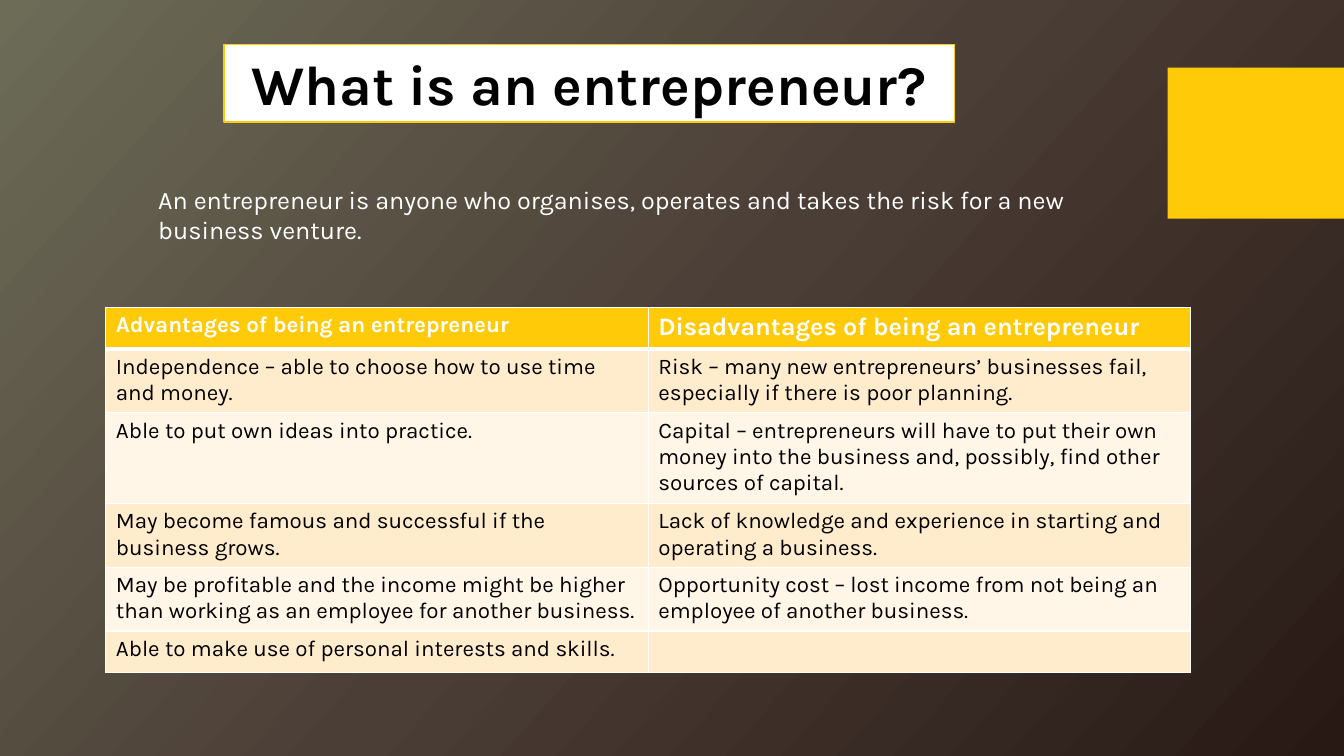
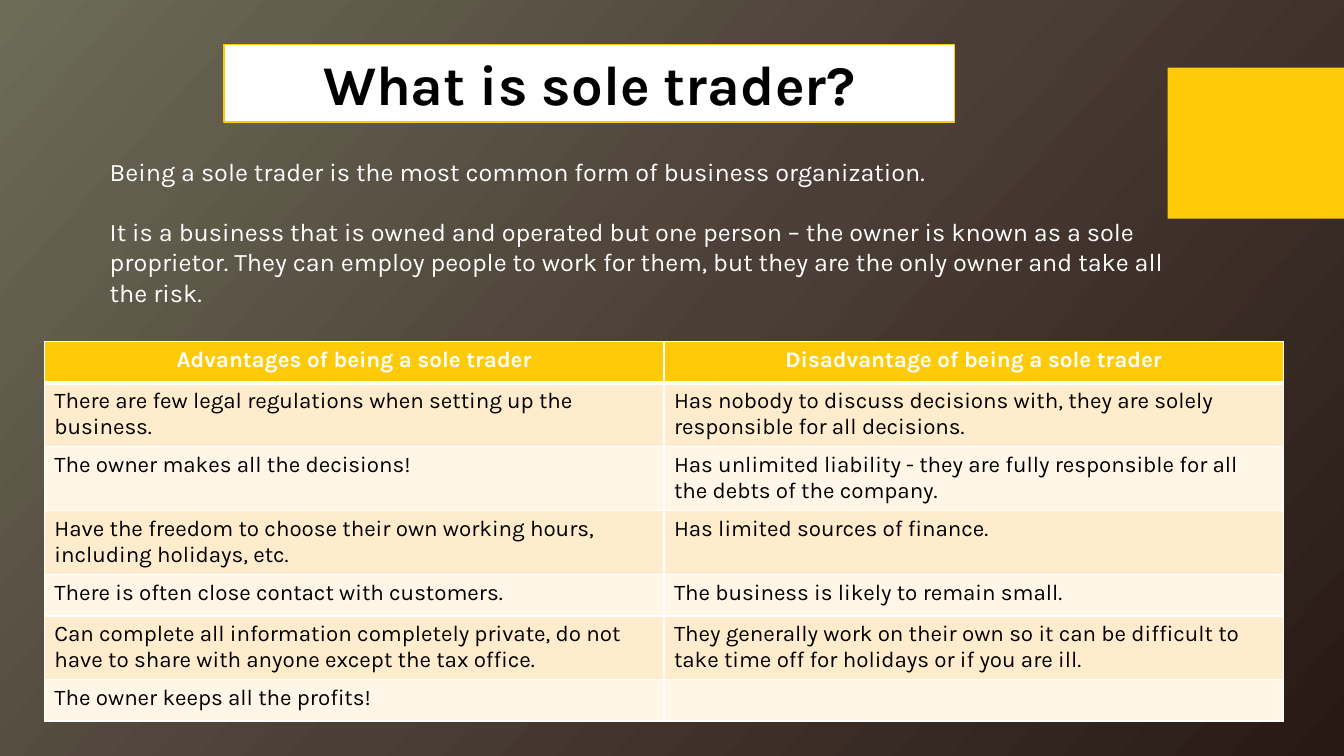
from copy import deepcopy

from lxml.etree import SubElement
from pptx import Presentation
from pptx.dml.color import RGBColor
from pptx.enum.shapes import MSO_SHAPE as Shape
from pptx.enum.text import MSO_AUTO_SIZE as AutoSize, PP_ALIGN as Align
from pptx.oxml.ns import qn
from pptx.util import Inches, Pt

COLORS = {
    "white": "FFFFFF",
    "black": "000000",
    "yellow": "FFCA08",
    "band_dark": "FFECCC",
    "band_light": "FFF6E7",
}
BACKGROUND = [(0, "6C6C57"), (0.5, "4B3E36"), (1, "281915")]
FONT = "Karla"
ROW_HEIGHT = 0.41

ENTREPRENEUR_ROWS = [
    ("Advantages of being an entrepreneur", "Disadvantages of being an entrepreneur"),
    ("Independence – able to choose how to use time and money.",
     "Risk – many new entrepreneurs’ businesses fail, especially if there is poor planning."),
    ("Able to put own ideas into practice.",
     "Capital – entrepreneurs will have to put their own money into the business and, "
     "possibly, find other sources of capital."),
    ("May become famous and successful if the business grows.",
     "Lack of knowledge and experience in starting and operating a business."),
    ("May be profitable and the income might be higher than working as an employee "
     "for another business.",
     "Opportunity cost – lost income from not being an employee of another business."),
    ("Able to make use of personal interests and skills.", ""),
]
SOLE_TRADER_ROWS = [
    ("Advantages of being a sole trader", "Disadvantage of being a sole trader"),
    ("There are few legal regulations when setting up the business.",
     "Has nobody to discuss decisions with, they are solely responsible for all decisions."),
    ("The owner makes all the decisions!",
     "Has unlimited liability - they are fully responsible for all the debts of the company."),
    ("Have the freedom to choose their own working hours, including holidays, etc.",
     "Has limited sources of finance."),
    ("There is often close contact with customers.",
     "The business is likely to remain small."),
    ("Can complete all information completely private, do not have to share with anyone "
     "except the tax office.",
     "They generally work on their own so it can be difficult to take time off for "
     "holidays or if you are ill."),
    ("The owner keeps all the profits!", ""),
]


def rgb(name):
    return RGBColor.from_string(COLORS[name])


# Text
def write(frame, *paragraphs, size=16, color="black", bold=False, align=Align.LEFT, gap=0):
    frame.word_wrap = True
    for i, text in enumerate(paragraphs):
        paragraph = frame.add_paragraph() if i else frame.paragraphs[0]
        paragraph.text = text
        paragraph.alignment = align
        if i:
            paragraph.space_before = Pt(gap)
        font = paragraph.font
        font.name, font.size, font.bold = FONT, Pt(size), bold
        font.color.rgb = rgb(color)


def add_intro(slide, left, top, width, height, *paragraphs):
    intro = slide.shapes.add_textbox(*map(Inches, (left, top, width, height)))
    write(intro.text_frame, *paragraphs, size=18, color="white", gap=21.5)
    intro.text_frame.auto_size = AutoSize.SHAPE_TO_FIT_TEXT


# Shared slide parts
def set_background(master):
    fill = master.background.fill
    fill.gradient()
    fill.gradient_angle = 360 - 42
    stop_list = next(master.element.iter(qn("a:gsLst")))
    stop_list.append(deepcopy(stop_list[0]))
    for stop, (position, color) in zip(fill.gradient_stops, BACKGROUND):
        stop.position = position
        stop.color.rgb = RGBColor.from_string(color)


def add_box(slide, left, top, width, height, fill, line=None):
    box = slide.shapes.add_shape(Shape.RECTANGLE, *map(Inches, (left, top, width, height)))
    box.shadow.inherit = False
    box.fill.solid()
    box.fill.fore_color.rgb = rgb(fill)
    if line:
        box.line.color.rgb = rgb(line)
        box.line.width = Pt(1)
    else:
        box.line.fill.background()
    return box


def add_topic_slide(prs, title):
    slide = prs.slides.add_slide(prs.slide_layouts[6])
    add_box(slide, 11.58, 0.67, 1.75, 1.5, "yellow")
    banner = add_box(slide, 2.22, 0.44, 7.25, 0.77, "white", line="yellow")
    write(banner.text_frame, title, size=40, bold=True, align=Align.CENTER)
    banner.text_frame.auto_size = AutoSize.SHAPE_TO_FIT_TEXT
    return slide


# Comparison table
def set_borders(cell, top, bottom):
    properties = cell._tc.get_or_add_tcPr()
    for side, width in (("L", 1), ("R", 1), ("T", top), ("B", bottom)):
        border = SubElement(properties, qn(f"a:ln{side}"), w=str(Pt(width)))
        SubElement(SubElement(border, qn("a:solidFill")), qn("a:srgbClr"), val=COLORS["white"])


def add_comparison(slide, left, top, width, rows, header_sizes=(16, 16),
                   header_align=Align.LEFT):
    table = slide.shapes.add_table(
        len(rows), 2, Inches(left), Inches(top), Inches(width),
        Inches(ROW_HEIGHT * len(rows))).table
    for r, row in enumerate(rows):
        table.rows[r].height = Inches(ROW_HEIGHT)
        for c, text in enumerate(row):
            cell = table.cell(r, c)
            set_borders(cell, top=3 if r == 1 else 1, bottom=3 if r == 0 else 1)
            cell.fill.solid()
            if r == 0:
                cell.fill.fore_color.rgb = rgb("yellow")
                write(cell.text_frame, text, size=header_sizes[c], color="white",
                      bold=True, align=header_align)
            else:
                cell.fill.fore_color.rgb = rgb("band_dark" if r % 2 else "band_light")
                write(cell.text_frame, text)


def main():
    prs = Presentation()
    prs.slide_width, prs.slide_height = Inches(13.33), Inches(7.5)
    set_background(prs.slide_master)

    # Entrepreneur
    entrepreneur = add_topic_slide(prs, "What is an entrepreneur?")
    add_intro(entrepreneur, 1.47, 1.78, 9.21, 0.71,
              "An entrepreneur is anyone who organises, operates and takes the risk "
              "for a new business venture.")
    add_comparison(entrepreneur, 1.05, 3.05, 10.76, ENTREPRENEUR_ROWS, header_sizes=(16, 18))

    # Sole trader
    sole_trader = add_topic_slide(prs, "What is sole trader?")
    add_intro(sole_trader, 0.99, 1.5, 10.7, 1.62,
              "Being a sole trader is the most common form of business organization.",
              "It is a business that is owned and operated but one person – the owner is "
              "known as a sole proprietor. They can employ people to work for them, but "
              "they are the only owner and take all the risk.")
    add_comparison(sole_trader, 0.44, 3.39, 12.29, SOLE_TRADER_ROWS,
                   header_align=Align.CENTER)

    prs.save("out.pptx")


if __name__ == "__main__":
    main()
